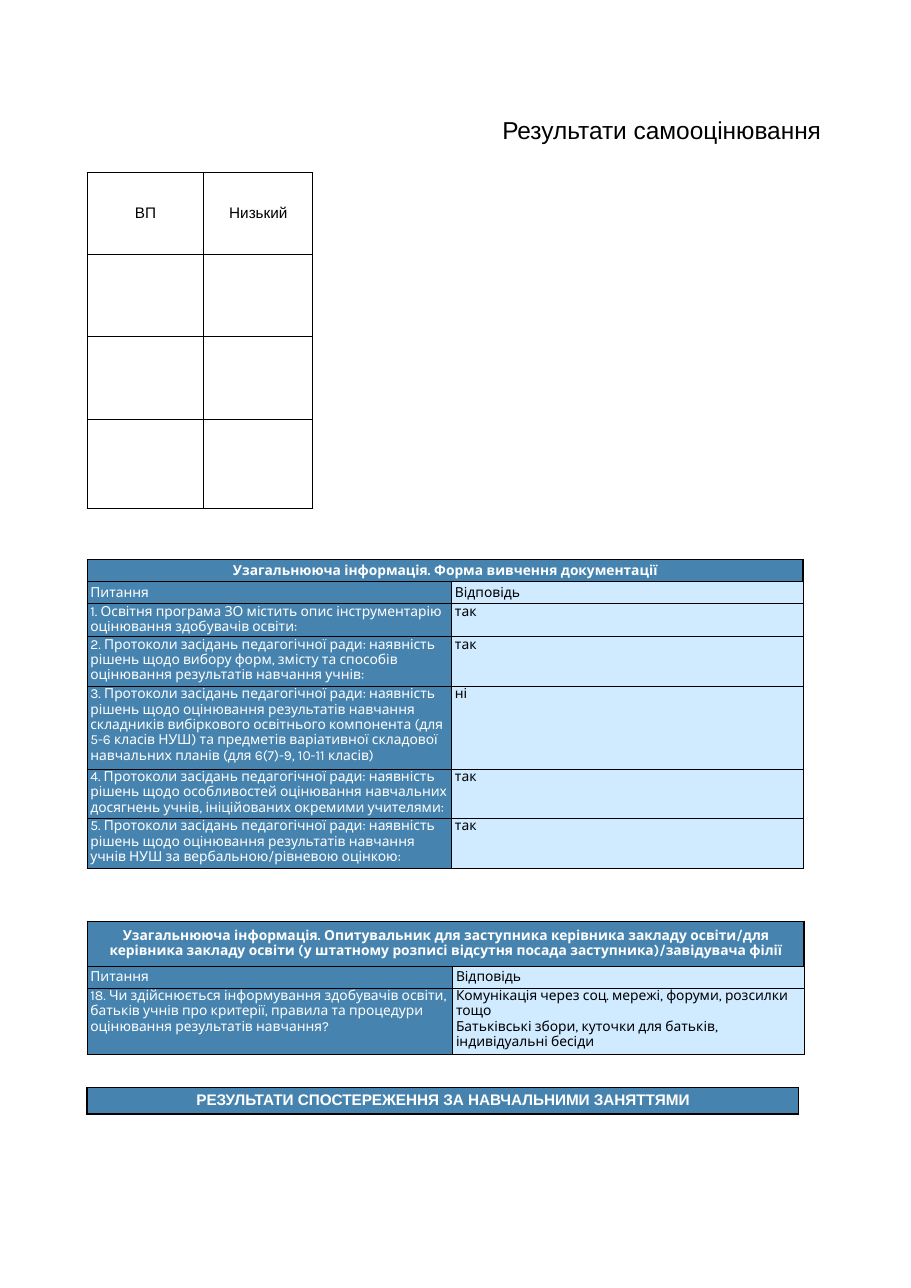
from lxml.etree import SubElement
from pptx import Presentation
from pptx.dml.color import RGBColor
from pptx.enum.text import MSO_ANCHOR, PP_ALIGN
from pptx.oxml.ns import qn
from pptx.util import Inches, Pt

BLACK = RGBColor(0x00, 0x00, 0x00)
WHITE = RGBColor(0xFF, 0xFF, 0xFF)
BLUE = RGBColor(0x46, 0x84, 0xAF)
PALE_BLUE = RGBColor(0xD0, 0xEA, 0xFF)

LEFT = 0.79
SIDES = "LRTB"
THIN, THICK = 0.75, 1
LINE_SPACING = 0.95
CELL_MARGINS = {
    "margin_left": Inches(0.03),
    "margin_right": Inches(0.03),
    "margin_top": 0,
    "margin_bottom": 0,
}
TITLE_FRAME = {**CELL_MARGINS, "margin_right": 0, "word_wrap": True}

TITLE_FONT = {"name": "Arial", "size": Pt(16), "bold": False}
LEVEL_FONT = {"name": "Arial", "size": Pt(10), "bold": False}
BANNER_FONT = {"name": "Arial", "size": Pt(10), "bold": True}
HEADING_FONT = {"name": "Karla", "size": Pt(9), "bold": True}
BODY_FONT = {"name": "Karla", "size": Pt(9), "bold": False}

DOCUMENT_ANSWERS = [
    ("1. Освітня програма ЗО містить опис інструментарію оцінювання "
     "здобувачів освіти:", "так"),
    ("2. Протоколи засідань педагогічної ради: наявність рішень щодо вибору "
     "форм, змісту та способів оцінювання результатів навчання учнів:", "так"),
    ("3. Протоколи засідань педагогічної ради: наявність рішень щодо "
     "оцінювання результатів навчання складників вибіркового освітнього "
     "компонента (для 5-6 класів НУШ) та предметів варіативної складової "
     "навчальних планів (для 6(7)-9, 10-11 класів)", "ні"),
    ("4. Протоколи засідань педагогічної ради: наявність рішень щодо "
     "особливостей оцінювання навчальних досягнень учнів, ініційованих "
     "окремими учителями:", "так"),
    ("5. Протоколи засідань педагогічної ради: наявність рішень щодо "
     "оцінювання результатів навчання учнів НУШ за вербальною/рівневою "
     "оцінкою:", "так"),
]
DEPUTY_ANSWERS = [
    ("18. Чи здійснюється інформування здобувачів освіти, батьків учнів про "
     "критерії, правила та процедури оцінювання результатів навчання?",
     "Комунікація через соц. мережі, форуми, розсилки тощо\n"
     "Батьківські збори, куточки для батьків, індивідуальні бесіди"),
]


def apply_format(target, values):
    """Set every attribute in values on the target."""
    for attribute, value in values.items():
        setattr(target, attribute, value)


def write_text(frame, text, font, color, align=PP_ALIGN.LEFT):
    """Put formatted text into a text frame."""
    frame.text = text
    for paragraph in frame.paragraphs:
        apply_format(paragraph, {"alignment": align, "line_spacing": LINE_SPACING})
        for run in paragraph.runs:
            apply_format(run.font, font)
            run.font.color.rgb = color


def draw_borders(cell, thick_sides=""):
    """Outline a cell in black, with the named sides thicker."""
    properties = cell._tc.get_or_add_tcPr()
    for side in SIDES:
        width = Pt(THICK if side in thick_sides else THIN)
        border = SubElement(properties, qn(f"a:ln{side}"), w=str(width))
        fill = SubElement(border, qn("a:solidFill"))
        SubElement(fill, qn("a:srgbClr"), val=str(BLACK))


def fill_cell(cell, text, font, color, background=None, align=PP_ALIGN.LEFT,
              anchor=MSO_ANCHOR.MIDDLE, thick_sides=""):
    """Give a cell its borders, fill and text."""
    draw_borders(cell, thick_sides)
    if background is None:
        cell.fill.background()
    else:
        cell.fill.solid()
        cell.fill.fore_color.rgb = background
    apply_format(cell, {**CELL_MARGINS, "vertical_anchor": anchor})
    write_text(cell.text_frame, text, font, color, align)


def add_grid(slide, top, widths, heights):
    """Add a plain table with the given column widths and row heights."""
    grid = slide.shapes.add_table(
        len(heights), len(widths), Inches(LEFT), Inches(top),
        Inches(sum(widths)), Inches(sum(heights))).table
    apply_format(grid, {"first_row": False, "horz_banding": False})
    for column, width in zip(grid.columns, widths):
        column.width = Inches(width)
    for row, height in zip(grid.rows, heights):
        row.height = Inches(height)
    return grid


def add_title(slide, text):
    """Add the page title."""
    title = slide.shapes.add_textbox(
        Inches(4.53), Inches(1.06), Inches(2.95), Inches(0.26))
    apply_format(title.text_frame, TITLE_FRAME)
    write_text(title.text_frame, text, TITLE_FONT, BLACK)


def add_level_table(slide, headings):
    """Add the table of levels with empty rows under its headings."""
    levels = add_grid(slide, 1.57, [1.06, 0.99], [0.74, 0.74, 0.76, 0.81])
    for index, cell in enumerate(levels.iter_cells()):
        text = headings[index] if index < len(headings) else ""
        fill_cell(cell, text, LEVEL_FONT, BLACK, align=PP_ALIGN.CENTER)


def add_answer_table(slide, top, widths, heights, heading, answers):
    """Add a table of questions and answers under a merged heading."""
    survey = add_grid(slide, top, widths, heights)
    survey.cell(0, 0).merge(survey.cell(0, 1))
    for column, text in enumerate([heading, ""]):
        fill_cell(survey.cell(0, column), text, HEADING_FONT, WHITE, BLUE,
                  PP_ALIGN.CENTER, thick_sides="RB")
    for row, (question, answer) in enumerate([("Питання", "Відповідь"), *answers], 1):
        is_header = row == 1
        anchor = MSO_ANCHOR.MIDDLE if is_header else MSO_ANCHOR.TOP
        fill_cell(survey.cell(row, 0), question, BODY_FONT, WHITE, BLUE,
                  anchor=anchor, thick_sides="TR" if is_header else "")
        fill_cell(survey.cell(row, 1), answer, BODY_FONT, BLACK, PALE_BLUE,
                  anchor=anchor, thick_sides="TL" if is_header else "")


def add_banner(slide, text):
    """Add the one-cell section banner."""
    banner = add_grid(slide, 9.87, [6.46], [0.24])
    fill_cell(banner.cell(0, 0), text, BANNER_FONT, WHITE, BLUE,
              PP_ALIGN.CENTER, thick_sides=SIDES)


def main():
    """Build the self-assessment page."""
    report = Presentation()
    apply_format(report, {"slide_width": Inches(8.27), "slide_height": Inches(11.69)})
    slide = report.slides.add_slide(report.slide_layouts[6])
    add_level_table(slide, ["ВП", "Низький"])
    add_answer_table(
        slide, 5.08, [3.31, 3.19], [0.2, 0.2, 0.3, 0.45, 0.75, 0.45, 0.45],
        "Узагальнююча інформація. Форма вивчення документації",
        DOCUMENT_ANSWERS)
    add_answer_table(
        slide, 8.36, [3.32, 3.19], [0.41, 0.2, 0.6],
        "Узагальнююча інформація. Опитувальник для заступника керівника "
        "закладу освіти/для керівника закладу освіти (у штатному розписі "
        "відсутня посада заступника)/завідувача філії",
        DEPUTY_ANSWERS)
    add_banner(slide, "РЕЗУЛЬТАТИ СПОСТЕРЕЖЕННЯ ЗА НАВЧАЛЬНИМИ ЗАНЯТТЯМИ")
    add_title(slide, "Результати самооцінювання")
    report.save("out.pptx")


if __name__ == "__main__":
    main()
